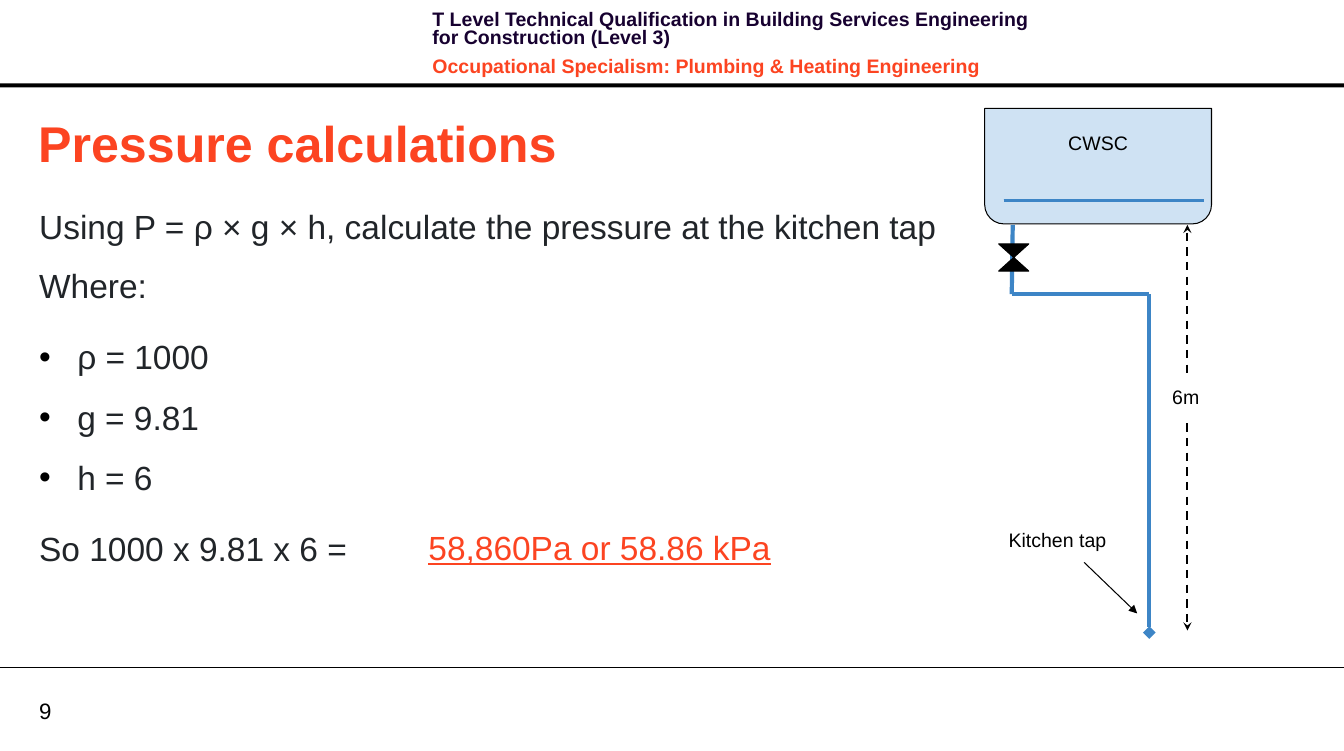
from itertools import pairwise

from lxml import etree
from pptx import Presentation
from pptx.dml.color import RGBColor
from pptx.enum.dml import MSO_LINE as Dash
from pptx.enum.shapes import MSO_CONNECTOR, MSO_SHAPE as Shape
from pptx.enum.text import MSO_ANCHOR as Anchor, MSO_AUTO_SIZE as AutoSize, PP_ALIGN as Align
from pptx.oxml.ns import qn
from pptx.util import Inches, Pt

COLORS = {"ink": "000000", "navy": "170130", "red": "FC4421", "body": "212529",
          "water": "CFE2F3", "pipe": "3D85C6", "white": "FFFFFF"}
FONT = "Arial"
WIDTH, HEIGHT = 13.39, 7.48
MARGIN = 0.39
RULE_TOP, RULE_HEIGHT, FOOT_LINE = 0.83, 0.04, 6.65

TITLE = "Pressure calculations"
PAGE_NUMBER = "9"
HEADER = [
    ("T Level Technical Qualification in Building Services Engineering "
     "for Construction (Level 3)", "navy"),
    ("Occupational Specialism: Plumbing & Heating Engineering", "red"),
]
# text, line spacing, space before, bulleted
BODY = [
    ("Using P = ρ × g × h, calculate the pressure at the kitchen tap", 1.2, 0, False),
    ("Where:", 1.2, 8, False),
    ("ρ = 1000", 1.5, 8, True),
    ("g = 9.81", 1.5, 0, True),
    ("h = 6", 1.5, 0, True),
    ("So 1000 x 9.81 x 6 =", 1.5, 8, False),
]
ANSWER = "58,860Pa or 58.86 kPa"

TANK = (9.81, 1.08, 2.26, 1.15)
VALVE = (9.95, 2.43, 0.3, 0.27)
PIPE = [(10.09, 2.24), (10.08, 2.93), (11.45, 2.93), (11.45, 6.3)]
DEPTH = [(11.83, 2.24), (11.83, 6.28)]
TAP_POINTER = [(10.8, 5.6), (11.33, 6.11)]
TANK_LABEL = ("CWSC", (10.42, 1.2, 1.04, 0.44))
DEPTH_LABEL = ("6m", (11.58, 3.73, 0.51, 0.44))
TAP_LABEL = ("Kitchen tap", (9.95, 5.16, 1.2, 0.44))
WAVE_STARTS = [(9.83, 1.66), (9.81, 1.77)]
# Bezier control points, measured from the start of a wave
WAVE = [(0, 0), (0.09, 0), (0.41, -0.04), (0.58, -0.01), (0.75, 0.01), (0.87, 0.15),
        (1.02, 0.16), (1.18, 0.16), (1.38, 0.02), (1.54, 0.01), (1.7, -0.01),
        (1.88, 0.05), (2, 0.05), (2.12, 0.05), (2.21, 0.01), (2.25, 0.01)]
WAVE_STEPS = 12


def rgb(name):
    return RGBColor.from_string(COLORS[name])


def set_font(para, size, color, bold=False, underline=False):
    font = para.font
    font.name, font.size, font.bold = FONT, Pt(size), bold
    font.underline = underline
    font.color.rgb = rgb(color)


def set_frame(frame, inset_x, inset_y, anchor=Anchor.TOP):
    frame.word_wrap = True
    frame.auto_size = AutoSize.NONE
    frame.vertical_anchor = anchor
    frame.margin_left = frame.margin_right = Inches(inset_x)
    frame.margin_top = frame.margin_bottom = Inches(inset_y)


def add_text(page, at, lines, inset_x=0.1, inset_y=0.1, anchor=Anchor.TOP):
    """Add a text box with one paragraph per line and return its paragraphs."""
    frame = page.shapes.add_textbox(*map(Inches, at)).text_frame
    set_frame(frame, inset_x, inset_y, anchor)
    frame.text = "\n".join(lines)
    return frame.paragraphs


def add_shape(page, kind, at, fill, line=None):
    shape = page.shapes.add_shape(kind, *map(Inches, at))
    shape.shadow.inherit = False
    shape.fill.solid()
    shape.fill.fore_color.rgb = rgb(fill)
    if line:
        shape.line.color.rgb = rgb(line)
        shape.line.width = Pt(0.75)
    else:
        shape.line.fill.background()
    return shape


def add_line(page, start, end, color, width, dash=None, head=None, tail=None):
    ends = map(Inches, (*start, *end))
    line = page.shapes.add_connector(MSO_CONNECTOR.STRAIGHT, *ends)
    line.line.color.rgb = rgb(color)
    line.line.width = Pt(width)
    if dash:
        line.line.dash_style = dash
    properties = line._element.spPr
    outline = properties.find(qn("a:ln"))
    for tag, kind in (("a:headEnd", head), ("a:tailEnd", tail)):
        if kind:
            etree.SubElement(outline, qn(tag), type=kind)
    etree.SubElement(properties, qn("a:effectLst"))


def add_label(page, label, at):
    box = add_shape(page, Shape.RECTANGLE, at, "white")
    set_frame(box.text_frame, 0.1, 0.1)
    box.text_frame.text = label
    para = box.text_frame.paragraphs[0]
    para.alignment = Align.LEFT
    set_font(para, 14, "ink")


def add_bullet(para, indent=0.38):
    properties = para._p.get_or_add_pPr()
    properties.set("marL", str(Inches(indent)))
    properties.set("indent", str(-Inches(indent)))
    color = etree.SubElement(properties, qn("a:buClr"))
    etree.SubElement(color, qn("a:srgbClr"), val=COLORS["ink"])
    etree.SubElement(properties, qn("a:buFont"), typeface=FONT)
    etree.SubElement(properties, qn("a:buChar"), char="•")


def curve_points(controls):
    """Return points along a chain of cubic Bezier curves."""
    points = [controls[0]]
    for first in range(0, len(controls) - 1, 3):
        for step in range(1, WAVE_STEPS + 1):
            t = step / WAVE_STEPS
            weights = ((1 - t) ** 3, 3 * t * (1 - t) ** 2, 3 * t * t * (1 - t), t ** 3)
            points.append(tuple(sum(w * c[axis] for w, c in zip(weights, controls[first:first + 4]))
                                for axis in (0, 1)))
    return points


def add_wave(page, left, top):
    points = [(left + x, top + y) for x, y in curve_points(WAVE)]
    builder = page.shapes.build_freeform(*points[0], scale=Inches(1))
    builder.add_line_segments(points[1:], close=False)
    wave = builder.convert_to_shape()
    wave.shadow.inherit = False
    wave.fill.background()
    wave.line.color.rgb = rgb("pipe")
    wave.line.width = Pt(2.25)


def add_frame_parts(page):
    """Add the header, the two rules and the page number."""
    number = add_text(page, (MARGIN, 6.94, 0.64, 0.27), [PAGE_NUMBER], 0, 0, Anchor.MIDDLE)[0]
    set_font(number, 16, "ink")
    add_line(page, (0, FOOT_LINE), (WIDTH, FOOT_LINE), "ink", 0.75)
    add_shape(page, Shape.RECTANGLE, (0, RULE_TOP, WIDTH, RULE_HEIGHT), "ink")
    paras = add_text(page, (4.21, 0.07, 6.37, 0.64), [text for text, _ in HEADER], 0.1, 0.05)
    for index, (para, (_, color)) in enumerate(zip(paras, HEADER)):
        para.line_spacing = Pt(13.1)
        para.space_before = Pt(4 if index else 0)
        para.space_after = Pt(4)
        set_font(para, 14, color, bold=True)


def add_working(page):
    title = page.shapes.title
    title.left, title.top, title.width, title.height = map(Inches, (0.28, 1.06, 12.72, 0.71))
    set_frame(title.text_frame, 0.1, 0.05, Anchor.MIDDLE)
    title.text_frame.text = TITLE
    heading = title.text_frame.paragraphs[0]
    heading.alignment = Align.LEFT
    set_font(heading, 36, "red", bold=True)

    paras = add_text(page, (MARGIN, 1.97, 12.6, 4.53), [row[0] for row in BODY], 0, 0)
    for para, (_, spacing, before, bulleted) in zip(paras, BODY):
        if bulleted:
            add_bullet(para)
        para.line_spacing = spacing
        para.space_before = Pt(before)
        set_font(para, 24, "body")


def add_diagram(page):
    tank = add_shape(page, Shape.ROUND_2_SAME_RECTANGLE, TANK, "water", "ink")
    tank.rotation = 180
    for start, end in pairwise(PIPE):
        add_line(page, start, end, "pipe", 3, tail="diamond" if end == PIPE[-1] else None)
    add_shape(page, Shape.FLOWCHART_COLLATE, VALVE, "ink", "ink")
    for start in WAVE_STARTS:
        add_wave(page, *start)
    add_line(page, *DEPTH, "ink", 1.5, Dash.DASH, "stealth", "stealth")
    label, at = TANK_LABEL
    tank_text = add_text(page, at, [label])[0]
    tank_text.alignment = Align.CENTER
    set_font(tank_text, 14, "ink")
    add_label(page, *DEPTH_LABEL)
    add_line(page, *TAP_POINTER, "ink", 0.75, tail="triangle")
    add_label(page, *TAP_LABEL)


def main():
    deck = Presentation()
    deck.slide_width, deck.slide_height = Inches(WIDTH), Inches(HEIGHT)
    page = deck.slides.add_slide(deck.slide_layouts[5])
    add_frame_parts(page)
    add_working(page)
    add_diagram(page)
    answer = add_text(page, (4.17, 4.95, 4.52, 0.61), [ANSWER])[0]
    answer.line_spacing = 1.5
    answer.space_after = Pt(8)
    set_font(answer, 24, "red", underline=True)
    deck.save("out.pptx")


if __name__ == "__main__":
    main()
